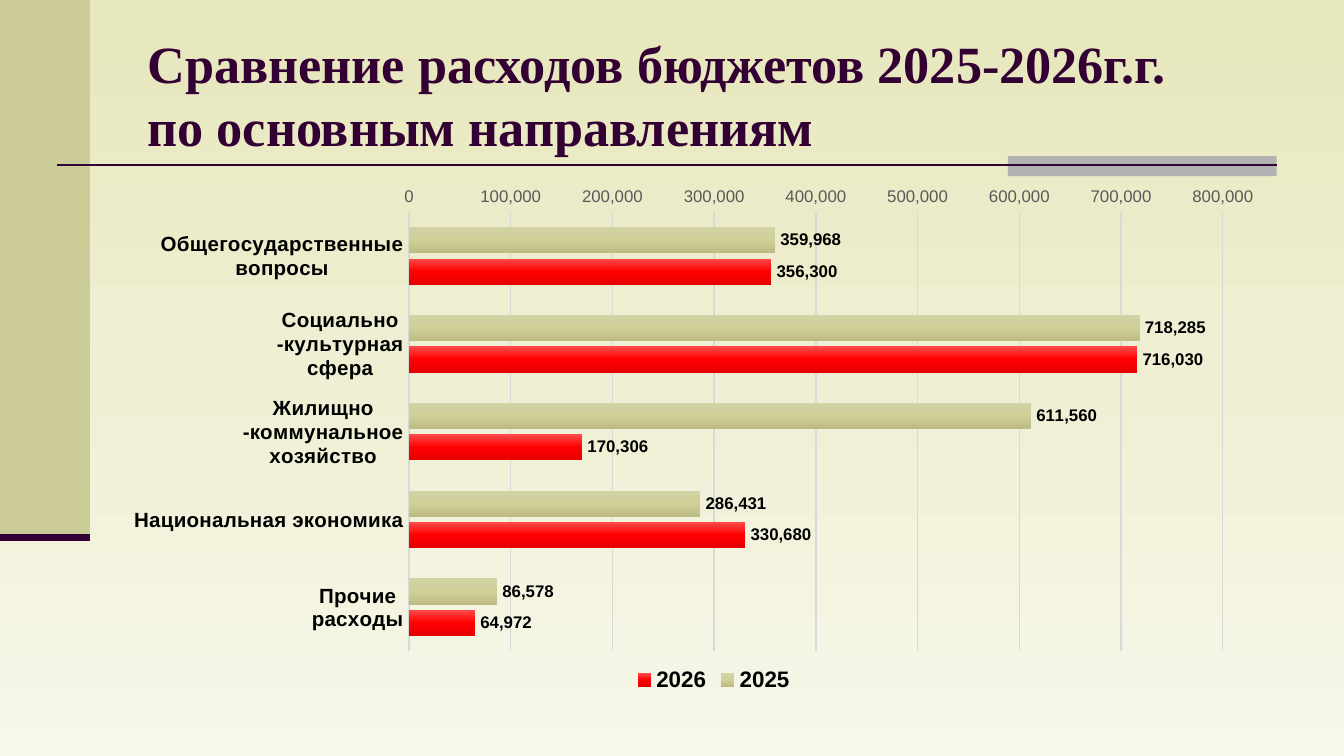
from copy import deepcopy
from dataclasses import dataclass

from lxml import etree
from pptx import Presentation
from pptx.chart.data import CategoryChartData
from pptx.dml.color import RGBColor
from pptx.enum.chart import XL_CHART_TYPE, XL_LABEL_POSITION, XL_LEGEND_POSITION, XL_TICK_MARK
from pptx.enum.shapes import MSO_CONNECTOR, MSO_SHAPE
from pptx.enum.text import MSO_ANCHOR
from pptx.oxml.ns import qn
from pptx.util import Cm, Pt

BAR_CLUSTERED = XL_CHART_TYPE.BAR_CLUSTERED
OUTSIDE_END = XL_LABEL_POSITION.OUTSIDE_END
LEGEND_BOTTOM = XL_LEGEND_POSITION.BOTTOM
NO_TICK = XL_TICK_MARK.NONE
STRAIGHT = MSO_CONNECTOR.STRAIGHT
RECTANGLE = MSO_SHAPE.RECTANGLE
MIDDLE = MSO_ANCHOR.MIDDLE


@dataclass(frozen=True)
class Theme:
    ink: str = "330033"
    panel: str = "CCCC99"
    tab: str = "B2B2B2"
    text: str = "000000"
    muted: str = "595959"
    grid: str = "D9D9D9"
    background: tuple = ("E7E7BC", "EFEFD4", "F7F7EA")
    previous_year: tuple = ("D2D2A5", "CFCF96", "BBBB83")
    next_year: tuple = ("FF4B4B", "FF0000", "E30000")
    title_font: str = "Times New Roman"
    chart_font: str = "Arial"
    title_size: int = 28
    legend_size: int = 12
    category_size: int = 11
    chart_size: int = 10
    value_size: int = 9


THEME = Theme()
TITLE_LINES = ["Сравнение расходов бюджетов 2025-2026г.г.", "по основным направлениям"]
CATEGORIES = [
    "Общегосударственные\nвопросы",
    "Социально\n-культурная\nсфера",
    "Жилищно\n-коммунальное\nхозяйство",
    "Национальная экономика",
    "Прочие\nрасходы",
]
SPENDING = [
    ("2025", [359968, 718285, 611560, 286431, 86578], THEME.previous_year),
    ("2026", [356300, 716030, 170306, 330680, 64972], THEME.next_year),
]
NUMBER_FORMAT = "#,##0"


def rgb(color):
    return RGBColor.from_string(color)


def style_font(font, name, size, color, bold=False):
    font.name = name
    font.size = Pt(size)
    font.bold = bold
    font.color.rgb = rgb(color)


def fill_gradient(fill, owner, colors):
    fill.gradient()
    fill.gradient_angle = 270
    stop_list = owner.find(".//" + qn("a:gsLst"))
    stop_list.append(deepcopy(stop_list[-1]))
    for index, (stop, color) in enumerate(zip(fill.gradient_stops, colors)):
        stop.position = index / (len(colors) - 1)
        stop.color.rgb = rgb(color)


def add_block(slide, left, top, width, height, color):
    shape = slide.shapes.add_shape(RECTANGLE, left, top, width, height)
    shape.shadow.inherit = False
    shape.fill.solid()
    shape.fill.fore_color.rgb = rgb(color)
    shape.line.fill.background()


def add_rule(slide, left, top, width, weight):
    connector = slide.shapes.add_connector(STRAIGHT, left, top, left + width, top)
    connector.line.color.rgb = rgb(THEME.ink)
    connector.line.width = Pt(weight)
    etree.SubElement(connector._element.spPr, qn("a:effectLst"))


def add_side_panel(slide, left, top, width, height):
    add_block(slide, left, top, width, height, THEME.panel)
    add_rule(slide, left, top + height, width, 3.5)


def add_header_rule(slide, left, top, width, height):
    tab_width = Cm(5.08)
    add_block(slide, left + width - tab_width, top, tab_width, height, THEME.tab)
    add_rule(slide, left, top + Cm(0.17), width, 1.5)


def add_title(slide, left, top, width, height):
    frame = slide.shapes.add_textbox(left, top, width, height).text_frame
    frame.word_wrap = True
    frame.vertical_anchor = MIDDLE
    paragraph = frame.paragraphs[0]
    for index, line in enumerate(TITLE_LINES):
        if index:
            paragraph.add_line_break()
        run = paragraph.add_run()
        run.text = line
        style_font(run.font, THEME.title_font, THEME.title_size, THEME.ink, True)


def set_layout(element, index, settings):
    for old_layout in element.findall(qn("c:layout")):
        element.remove(old_layout)
    layout = etree.Element(qn("c:layout"))
    manual = etree.SubElement(layout, qn("c:manualLayout"))
    for name, value in settings.items():
        etree.SubElement(manual, qn("c:" + name)).set("val", str(value))
    element.insert(index, layout)


def style_axes(chart):
    categories = chart.category_axis
    categories.reverse_order = True
    categories.format.line.color.rgb = rgb(THEME.grid)
    categories.format.line.width = Pt(1)
    style_font(categories.tick_labels.font, THEME.chart_font, THEME.category_size, THEME.text, True)

    values = chart.value_axis
    values.minimum_scale, values.maximum_scale, values.major_unit = 0, 800000, 100000
    values.format.line.fill.background()
    values.major_gridlines.format.line.color.rgb = rgb(THEME.grid)
    values.major_gridlines.format.line.width = Pt(0.75)
    values.tick_labels.number_format = NUMBER_FORMAT
    values.tick_labels.number_format_is_linked = False
    style_font(values.tick_labels.font, THEME.chart_font, THEME.value_size, THEME.muted)

    for axis in (categories, values):
        axis.major_tick_mark = axis.minor_tick_mark = NO_TICK


def style_series(series, colors):
    fill_gradient(series.format.fill, series._element, colors)
    series.invert_if_negative = False
    labels = series.data_labels
    labels.show_value = True
    labels.position = OUTSIDE_END
    labels.number_format = NUMBER_FORMAT
    labels.number_format_is_linked = False
    style_font(labels.font, THEME.chart_font, THEME.value_size, THEME.text, True)


def add_spending_chart(slide, left, top, width, height):
    data = CategoryChartData(number_format=NUMBER_FORMAT)
    data.categories = CATEGORIES
    for name, values, _ in SPENDING:
        data.add_series(name, values)
    chart = slide.shapes.add_chart(BAR_CLUSTERED, left, top, width, height, data).chart
    chart.has_title = False
    style_font(chart.font, THEME.chart_font, THEME.chart_size, THEME.text)
    style_axes(chart)

    plot = chart.plots[0]
    plot.vary_by_categories = False
    plot.gap_width = 115
    plot.overlap = -20
    for series, (_, _, colors) in zip(plot.series, SPENDING):
        style_series(series, colors)

    chart.has_legend = True
    legend = chart.legend
    legend.position = LEGEND_BOTTOM
    legend.include_in_layout = False
    style_font(legend.font, THEME.chart_font, THEME.legend_size, THEME.text, True)

    edges = {"xMode": "edge", "yMode": "edge"}
    plot_area = chart._chartSpace.find(".//" + qn("c:plotArea"))
    set_layout(plot_area, 0, {
        "layoutTarget": "inner", **edges,
        "x": Cm(5.62) / width, "y": Cm(0.68) / height,
        "w": Cm(15.38) / width, "h": Cm(8.3) / height,
    })
    set_layout(legend._element, 1, {**edges, "x": Cm(9.8) / width, "y": Cm(9.2) / height})


def main():
    presentation = Presentation()
    presentation.slide_width = Cm(25.4)
    presentation.slide_height = Cm(14.29)
    slide = presentation.slides.add_slide(presentation.slide_layouts[6])
    fill_gradient(slide.background.fill, slide._element, THEME.background)
    add_side_panel(slide, Cm(0), Cm(0), Cm(1.7), Cm(10.16))
    add_header_rule(slide, Cm(1.07), Cm(2.95), Cm(23.06), Cm(0.38))
    add_title(slide, Cm(2.54), Cm(0.58), Cm(21.59), Cm(2.39))
    add_spending_chart(slide, Cm(2.11), Cm(3.33), Cm(22.02), Cm(10.01))
    presentation.save("out.pptx")


if __name__ == "__main__":
    main()
